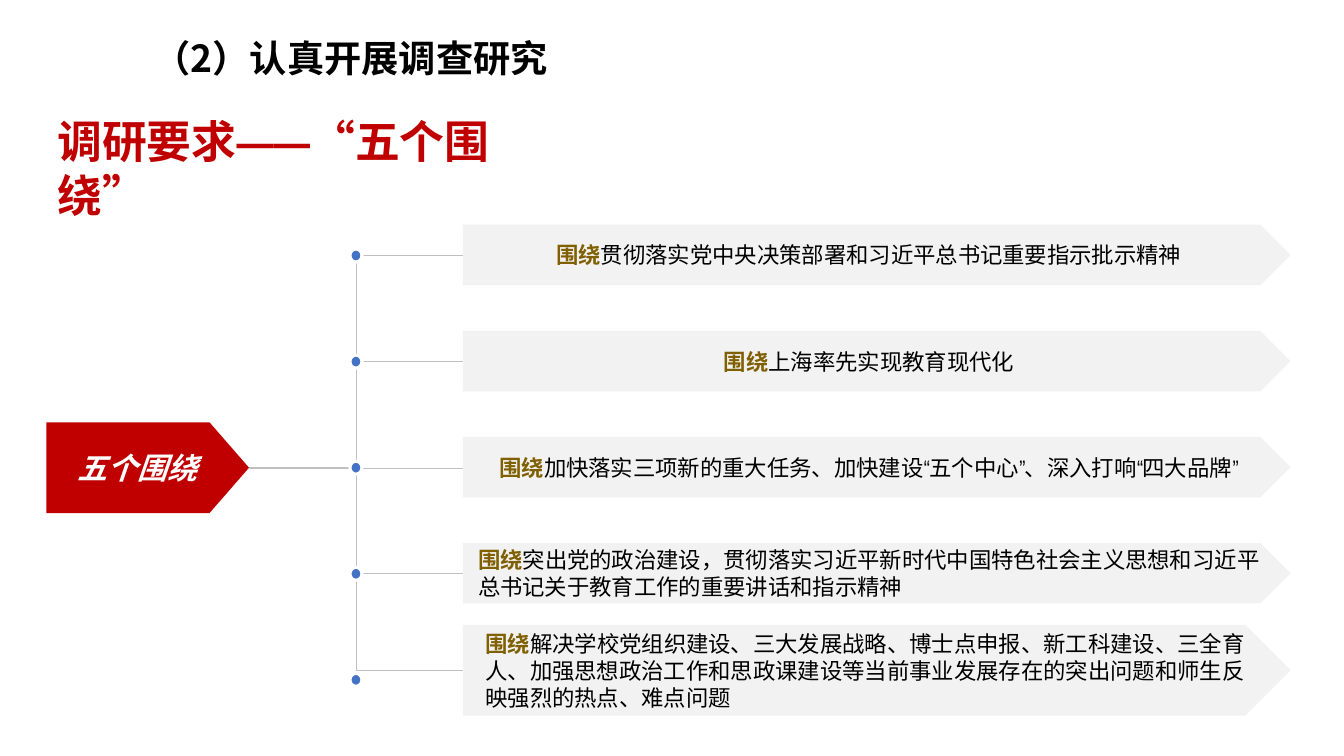
from dataclasses import dataclass

from lxml import etree
from pptx import Presentation
from pptx.dml.color import RGBColor
from pptx.enum import lang, shapes, text
from pptx.oxml import ns
from pptx.util import Inches, Pt


@dataclass(frozen=True)
class Theme:
    red: str = "C00000"
    gold: str = "806000"
    black: str = "000000"
    white: str = "FFFFFF"
    bar: str = "F2F2F2"
    branch: str = "BFBFBF"
    dot: str = "4472C4"
    narrow: str = "Arial Narrow"
    sans: str = "Noto Sans CJK SC"
    title: float = 26.6
    heading: float = 32
    root: float = 21.4
    body: float = 16


theme = Theme()


def add_run(paragraph, words, *, size, color, face=theme.narrow, bold=True, italic=False):
    run = paragraph.add_run()
    run.text = words
    font = run.font
    font.size, font.bold, font.italic = Pt(size), bold, italic
    font.color.rgb = RGBColor.from_string(color)
    font.language_id = lang.MSO_LANGUAGE_ID.SIMPLIFIED_CHINESE
    font.name = face
    east_asian = etree.SubElement(run._r.get_or_add_rPr(), ns.qn("a:ea"))
    east_asian.set("typeface", face)


def add_plate(left, top, width, height, fill, tip=0.5):
    """Add a pentagon arrow whose text block is centred; return its first paragraph."""
    plate = slide.shapes.add_shape(
        shapes.MSO_SHAPE.PENTAGON, Inches(left), Inches(top), Inches(width), Inches(height))
    plate.adjustments[0] = tip
    plate.shadow.inherit = False
    plate.fill.solid()
    plate.fill.fore_color.rgb = RGBColor.from_string(fill)
    plate.line.fill.background()
    frame = plate.text_frame
    frame.word_wrap = True
    frame.vertical_anchor = text.MSO_ANCHOR.MIDDLE
    frame.margin_left = frame.margin_right = Inches(0.13)
    frame.margin_top = frame.margin_bottom = Inches(0.07)
    frame._txBody.bodyPr.set("anchorCtr", "1")
    frame.paragraphs[0].alignment = text.PP_ALIGN.LEFT
    return frame.paragraphs[0]


prs = Presentation()
prs.slide_width, prs.slide_height = Inches(13.33), Inches(7.5)
slide = prs.slides.add_slide(prs.slide_layouts[5])

title = slide.shapes.title
title.left, title.top, title.width, title.height = (
    Inches(1.42), Inches(0.3), Inches(5.12), Inches(0.55))
title.text_frame.vertical_anchor = text.MSO_ANCHOR.TOP
title_line = title.text_frame.paragraphs[0]
title_line.alignment = text.PP_ALIGN.LEFT
add_run(title_line, "（2）认真开展调查研究", size=theme.title, color=theme.black, face=theme.sans)

heading = slide.shapes.add_textbox(Inches(0.47), Inches(1.08), Inches(5.24), Inches(0.64))
heading.text_frame.word_wrap = True
heading_line = heading.text_frame.paragraphs[0]
add_run(heading_line, "调研要求——", size=theme.heading, color=theme.red)
add_run(heading_line, "“五个围绕”", size=theme.heading, color=theme.red, face=theme.sans)

root = add_plate(0.46, 4.19, 2.01, 0.9, theme.red, tip=0.435)
add_run(root, "五个围绕", size=theme.root, color=theme.white, italic=True)

topics = [
    "贯彻落实党中央决策部署和习近平总书记重要指示批示精神",
    "上海率先实现教育现代化",
    "加快落实三项新的重大任务、加快建设“五个中心”、深入打响“四大品牌”",
    "突出党的政治建设，贯彻落实习近平新时代中国特色社会主义思想和习近平总书记关于教育工作的重要讲话和指示精神",
    "解决学校党组织建设、三大发展战略、博士点申报、新工科建设、三全育人、加强思想政治工作和"
    "思政课建设等当前事业发展存在的突出问题和师生反映强烈的热点、难点问题",
]
pitch = 4.21 / 4
root_tip, root_middle, bar_left = 2.47, 4.64, 4.59
bars = [(2.23 + row * pitch, 0.6) for row in range(4)] + [(6.2, 0.9)]

for row, (top, height) in enumerate(bars):
    middle = root_middle if row == 2 else top + height / 2
    kind = shapes.MSO_CONNECTOR.STRAIGHT if row == 2 else shapes.MSO_CONNECTOR.ELBOW
    branch = slide.shapes.add_connector(
        kind, Inches(root_tip), Inches(root_middle), Inches(bar_left), Inches(middle))
    branch.line.color.rgb = RGBColor.from_string(theme.branch)
    branch.line.width = Pt(0.25)
    etree.SubElement(branch._element.spPr, ns.qn("a:effectLst"))

for row, ((top, height), topic) in enumerate(zip(bars, topics)):
    line = add_plate(bar_left, top, 8.21, height, theme.bar)
    if row == 2:
        line.alignment = text.PP_ALIGN.CENTER
    add_run(line, "围绕", size=theme.body, color=theme.gold)
    add_run(line, topic, size=theme.body, color=theme.black, bold=False)

for row in range(len(topics)):
    dot = slide.shapes.add_shape(
        shapes.MSO_SHAPE.OVAL, Inches(3.47), Inches(2.47 + row * pitch), Inches(0.12), Inches(0.13))
    dot.shadow.inherit = False
    dot.fill.solid()
    dot.fill.fore_color.rgb = RGBColor.from_string(theme.dot)
    dot.line.color.rgb = RGBColor.from_string(theme.white)
    dot.line.width = Pt(2.25)

prs.save("out.pptx")
